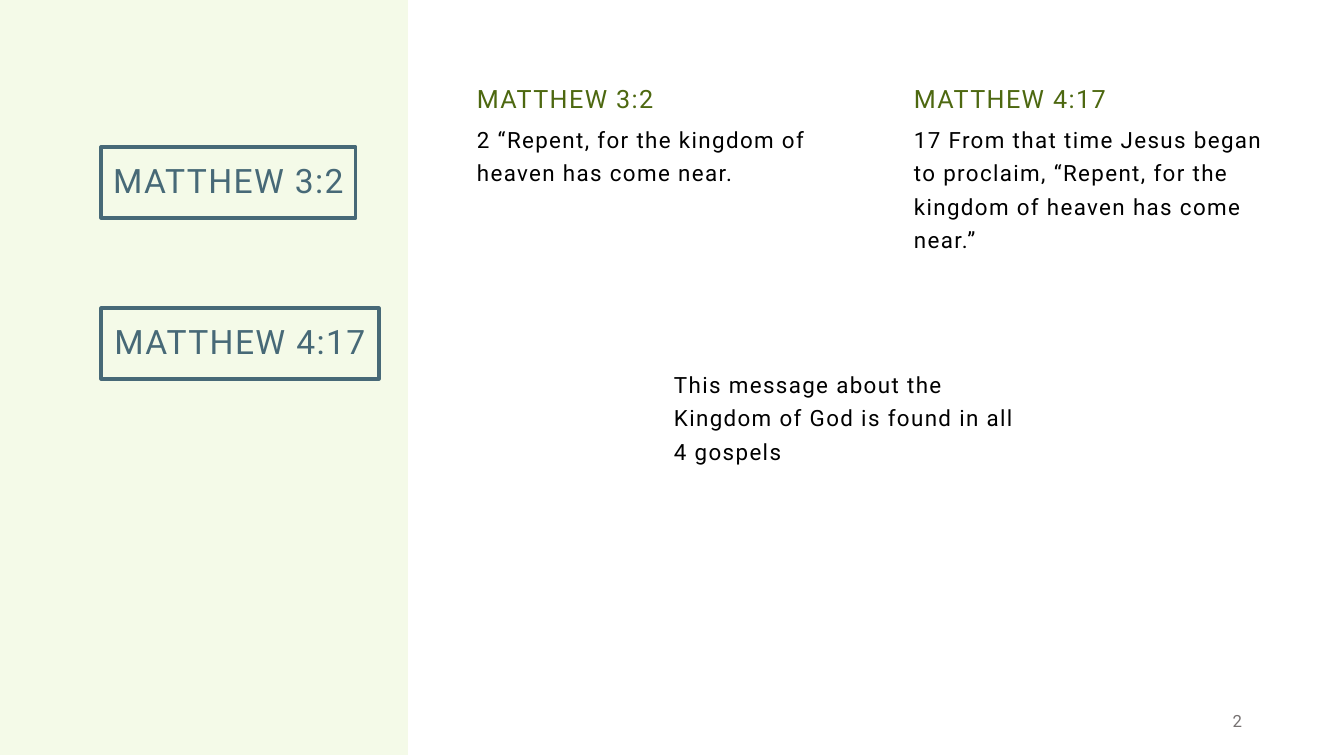
from lxml import etree
from pptx import Presentation
from pptx.dml.color import RGBColor
from pptx.enum.shapes import MSO_SHAPE
from pptx.enum.text import MSO_ANCHOR, PP_ALIGN
from pptx.oxml.ns import qn
from pptx.util import Pt

RECT = MSO_SHAPE.RECTANGLE
TOP, MIDDLE, BOTTOM = MSO_ANCHOR.TOP, MSO_ANCHOR.MIDDLE, MSO_ANCHOR.BOTTOM
LEFT, CENTER, RIGHT = PP_ALIGN.LEFT, PP_ALIGN.CENTER, PP_ALIGN.RIGHT

COLORS = {"panel": "9ACF21", "label": "476977", "heading": "4D6810",
          "body": "000000", "number": "767171"}
FONT = "Roboto"
COLUMN_W, HEADING_H, BODY_H = 378, 47, 151


def px(n):
    return round(n * 914400 / 100.8)


def rgb(name):
    return RGBColor.from_string(COLORS[name])


class SlideBuilder:
    def __init__(self, prs):
        self.s = prs.slides.add_slide(prs.slide_layouts[6])

    def set_text(self, sp, text, size, color, anchor=TOP, align=LEFT,
                 spacing=1.0, before=0, wrap=True):
        tf = sp.text_frame
        tf.text = text
        tf.word_wrap = wrap
        tf.vertical_anchor = anchor
        p = tf.paragraphs[0]
        p.alignment = align
        p.line_spacing = spacing
        p.space_before = Pt(before)
        r = p.runs[0]
        r.font.name = FONT
        r.font.size = Pt(size)
        r.font.color.rgb = rgb(color)
        r._r.get_or_add_rPr().set("spc", "100")

    def rect(self, x, y, w, h):
        sp = self.s.shapes.add_shape(RECT, px(x), px(y), px(w), px(h))
        sp.shadow.inherit = False
        return sp

    def panel(self, x, y, w, h, opacity):
        sp = self.rect(x, y, w, h)
        sp.line.fill.background()
        sp.fill.solid()
        sp.fill.fore_color.rgb = rgb("panel")
        color = sp._element.spPr.find(".//" + qn("a:srgbClr"))
        etree.SubElement(color, qn("a:alpha"), val=str(opacity * 1000))

    def label(self, x, y, w, h, text):
        """Outlined box with a centred verse reference."""
        sp = self.rect(x, y, w, h)
        sp.fill.background()
        sp.line.color.rgb = rgb("label")
        sp.line.width = Pt(2.25)
        self.set_text(sp, text, 24, "label", MIDDLE, CENTER, 0.9, wrap=False)

    def text(self, x, y, w, h, text, size, color, **style):
        sp = self.s.shapes.add_textbox(px(x), px(y), px(w), px(h))
        self.set_text(sp, text, size, color, **style)

    def body(self, x, y, text):
        self.text(x, y, COLUMN_W, BODY_H, text, 16, "body", spacing=1.25)

    def verse(self, x, heading, text):
        self.text(x, 72, COLUMN_W, HEADING_H, heading, 18, "heading",
                  anchor=BOTTOM, spacing=0.9, before=10)
        self.body(x, 114, text)


def main():
    prs = Presentation()
    prs.slide_width, prs.slide_height = px(1344), px(756)
    slide = SlideBuilder(prs)
    slide.panel(0, -1, 408, 756, opacity=10)

    verses = [
        ("MATTHEW 3:2", 467, 147, 255,
         "2 “Repent, for the kingdom of heaven has come near."),
        ("MATTHEW 4:17", 904, 308, 278,
         "17 From that time Jesus began to proclaim, “Repent, for the "
         "kingdom of heaven has come near.”"),
    ]
    for reference, column_x, label_y, label_w, words in verses:
        slide.label(101, label_y, label_w, 71, reference)
        slide.verse(column_x, reference, words)

    slide.body(664, 359, "This message about the Kingdom of God is found "
                         "in all 4 gospels")
    slide.text(950, 701, 302, 40, "2", 12, "number",
               anchor=MIDDLE, align=RIGHT)
    prs.save("out.pptx")


if __name__ == "__main__":
    main()
